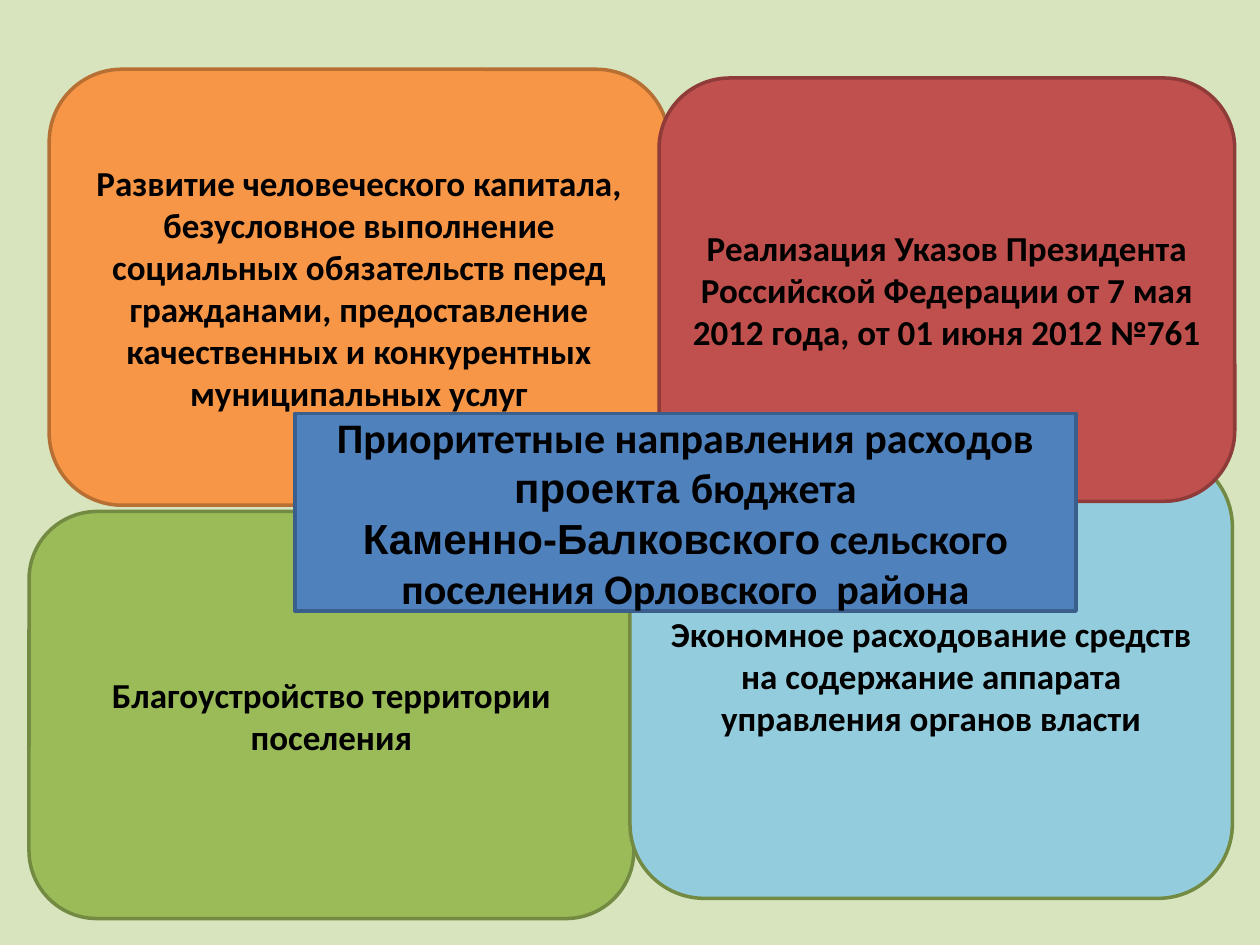
from pptx import Presentation
from pptx import util as u
from pptx.dml.color import RGBColor
from pptx.enum import shapes, text

COLOURS = {
    "background": "D7E4BD", "text": "000000",
    "orange": "F79646", "orange line": "B76F34",
    "green": "9BBB59", "green line": "738A42",
    "aqua": "93CDDD",
    "red": "C0504D", "red line": "8E3B39",
    "blue": "4F81BD", "blue line": "3A5F8C",
}


def colour(name):
    return RGBColor.from_string(COLOURS[name])


def add_box(kind, box, fill, line, paragraphs, size):
    """Add a filled shape; each paragraph is a list of (wording, font) runs."""
    shape = slide.shapes.add_shape(kind, *(u.Pt(value) for value in box))
    shape.shadow.inherit = False
    shape.fill.solid()
    shape.fill.fore_color.rgb = colour(fill)
    shape.line.color.rgb = colour(line)
    shape.line.width = u.Pt(2)
    frame = shape.text_frame
    frame.word_wrap = True
    frame.vertical_anchor = text.MSO_ANCHOR.MIDDLE
    for index, runs in enumerate(paragraphs):
        paragraph = frame.add_paragraph() if index else frame.paragraphs[0]
        paragraph.alignment = text.PP_ALIGN.CENTER
        for wording, font in runs:
            run = paragraph.add_run()
            run.text = wording
            run.font.name = font
            run.font.size = u.Pt(size)
            run.font.bold = True
            run.font.color.rgb = colour("text")


presentation = Presentation()
presentation.slide_width, presentation.slide_height = u.Pt(720), u.Pt(540)
slide = presentation.slides.add_slide(presentation.slide_layouts[6])
slide.background.fill.solid()
slide.background.fill.fore_color.rgb = colour("background")

# Four spending priorities, from back to front
priorities = [
    ((28.1, 39.6, 354.2, 249.1), "orange", "orange line",
     "Развитие человеческого капитала, безусловное выполнение социальных "
     "обязательств перед гражданами, предоставление качественных и "
     "конкурентных муниципальных услуг"),
    ((16.6, 292.3, 345.6, 232.6), "green", "green line",
     "Благоустройство территории поселения"),
    ((360, 258.5, 344.2, 254.9), "aqua", "green line",
     "Экономное расходование средств на содержание аппарата управления "
     "органов власти"),
    ((376.6, 44.6, 329, 241.9), "red", "red line",
     "Реализация Указов Президента Российской Федерации от 7 мая 2012 года, "
     "от 01 июня 2012 №761"),
]
for box, fill, line, wording in priorities:
    add_box(shapes.MSO_SHAPE.ROUNDED_RECTANGLE, box, fill, line,
            [[(wording, "Calibri")]], 20)

# Central title
title = [
    [("Приоритетные направления расходов ", "Calibri"),
     ("проекта ", "Arial"), ("бюджета", "Calibri")],
    [("Каменно-Балковского", "Arial"),
     (" сельского поселения Орловского  района", "Calibri")],
]
add_box(shapes.MSO_SHAPE.RECTANGLE, (168.5, 236.2, 446.4, 113),
        "blue", "blue line", title, 24)

presentation.save("out.pptx")
